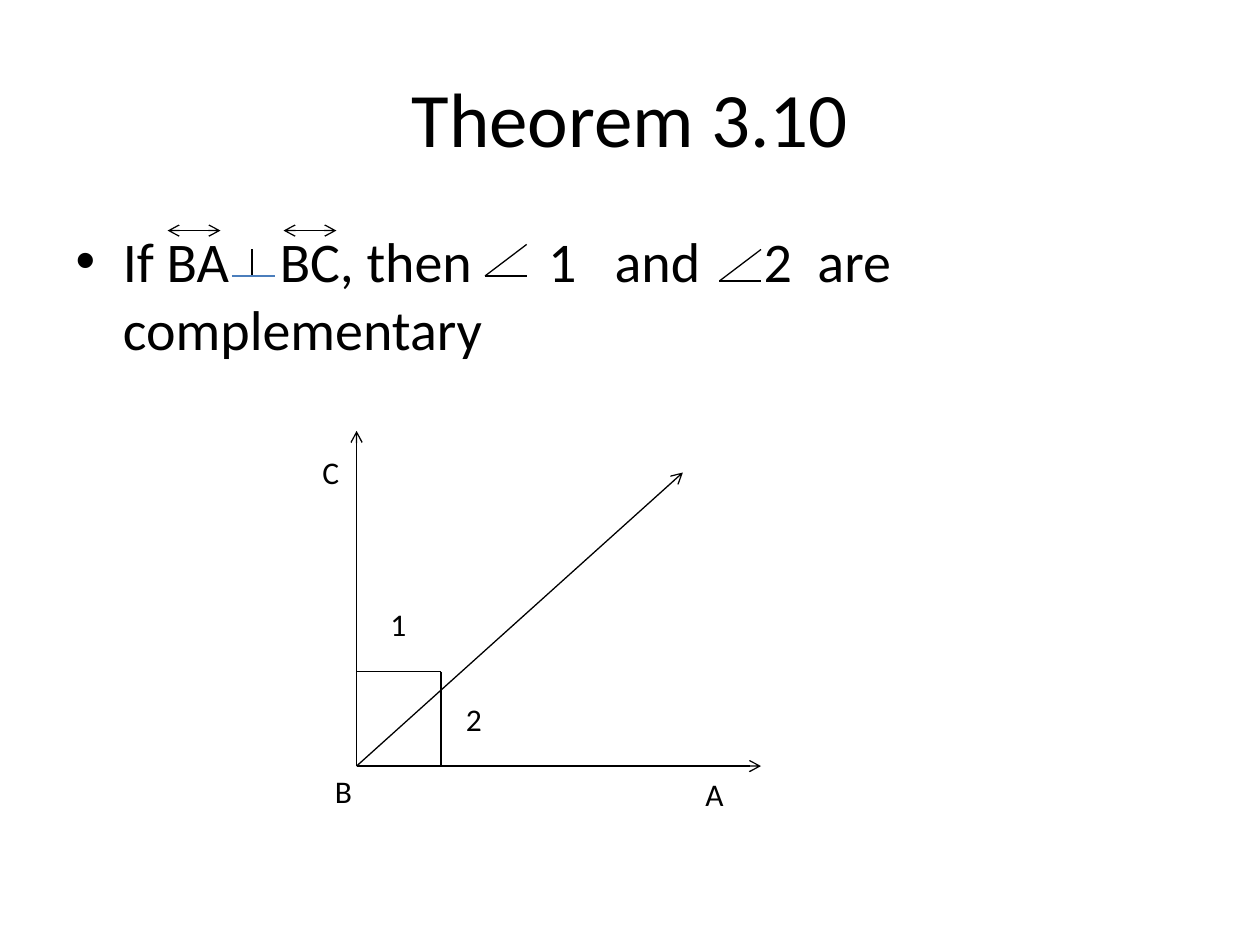
from lxml import etree
from pptx import Presentation
from pptx.dml.color import RGBColor
from pptx.enum.shapes import MSO_CONNECTOR
from pptx.enum.text import MSO_ANCHOR, MSO_AUTO_SIZE, PP_ALIGN
from pptx.oxml.ns import qn
from pptx.util import Inches, Pt

STRAIGHT = MSO_CONNECTOR.STRAIGHT
BLACK, BLUE = "000000", "4B7EBC"
FONT = "Calibri"
SPACE_PT = 7.23  # width of one space at 32 pt

TITLE = "Theorem 3.10"
# Words, and the gap after them counted in space widths
STATEMENT = [("If BA", 4), ("BC, then", 6), ("1", 3), ("and", 5), ("2", 2),
             ("are complementary", 0)]

ANGLE_SIGNS = [(3.85, 2.19), (5.71, 2.23)]  # vertex
ANGLE_W, ANGLE_H = 0.33, 0.25
LINE_SIGNS = [1.33, 2.25]  # left end of the arrows over BA and BC
LINE_SIGN_W, LINE_SIGN_Y = 0.42, 1.83
PERPENDICULAR = [((2, 1.98), (2, 2.19), BLACK), ((1.84, 2.19), (2.18, 2.19), BLUE)]

B = (2.83, 6.08)
RAY_ENDS = [(2.83, 3.42), (6.04, 6.08), (5.42, 3.75)]
CORNER = (3.5, 5.33)  # of the right-angle mark
LABELS = [("1", 3, 4.75, 0.5), ("2", 3.6, 5.51, 0.5), ("B", 2.56, 6.08, 0.54),
          ("C", 2.46, 3.55, 0.54), ("A", 5.5, 6.1, 0.54)]


def rgb(value):
    return RGBColor.from_string(value)


def add_run(p, text, size):
    r = p.add_run()
    r.text = text
    for name, value in {"name": FONT, "size": Pt(size)}.items():
        setattr(r.font, name, value)
    r.font.color.rgb = rgb(BLACK)
    return r


def add_line(start, end, color=BLACK, arrows=()):
    """Draw a line; arrows may hold "headEnd" (start) and "tailEnd" (end)."""
    line = slide.shapes.add_connector(STRAIGHT, *map(Inches, start + end))
    line.line.color.rgb = rgb(color)
    line.line.width = Pt(0.75)
    ln = line.line._get_or_add_ln()
    for tag in arrows:
        etree.SubElement(ln, qn("a:" + tag), type="arrow")
    etree.SubElement(line._element.spPr, qn("a:effectLst"))


def place(sp, *box):
    for name, value in zip(("left", "top", "width", "height"), box):
        setattr(sp, name, Inches(value))


prs = Presentation()
prs.slide_width, prs.slide_height = Inches(10), Inches(7.5)
slide = prs.slides.add_slide(prs.slide_layouts[1])

title, body = slide.placeholders
place(title, 0.5, 0.3, 9, 1.25)
title.text_frame.vertical_anchor = MSO_ANCHOR.MIDDLE
p = title.text_frame.paragraphs[0]
p.alignment = PP_ALIGN.CENTER
add_run(p, TITLE, 44)

place(body, 0.5, 1.75, 9, 4.95)
p = body.text_frame.paragraphs[0]
for words, gap in STATEMENT:
    add_run(p, words, 32)
    if gap:
        r = add_run(p, " ", 32)
        r._r.get_or_add_rPr().set("spc", str(round((gap - 1) * SPACE_PT * 100)))

for x, y in ANGLE_SIGNS:
    add_line((x + ANGLE_W, y - ANGLE_H), (x, y))
    add_line((x, y), (x + ANGLE_W, y))
for x in LINE_SIGNS:
    add_line((x, LINE_SIGN_Y), (x + LINE_SIGN_W, LINE_SIGN_Y),
             arrows=("headEnd", "tailEnd"))
for start, end, color in PERPENDICULAR:
    add_line(start, end, color)

for end in RAY_ENDS:
    add_line(B, end, arrows=("tailEnd",))
add_line((B[0], CORNER[1]), CORNER)
add_line(CORNER, (CORNER[0], B[1]))

for text, x, y, w in LABELS:
    tf = slide.shapes.add_textbox(*map(Inches, (x, y, w, 0.4))).text_frame
    tf.word_wrap = True
    tf.auto_size = MSO_AUTO_SIZE.SHAPE_TO_FIT_TEXT
    add_run(tf.paragraphs[0], text, 18)

prs.save("out.pptx")
